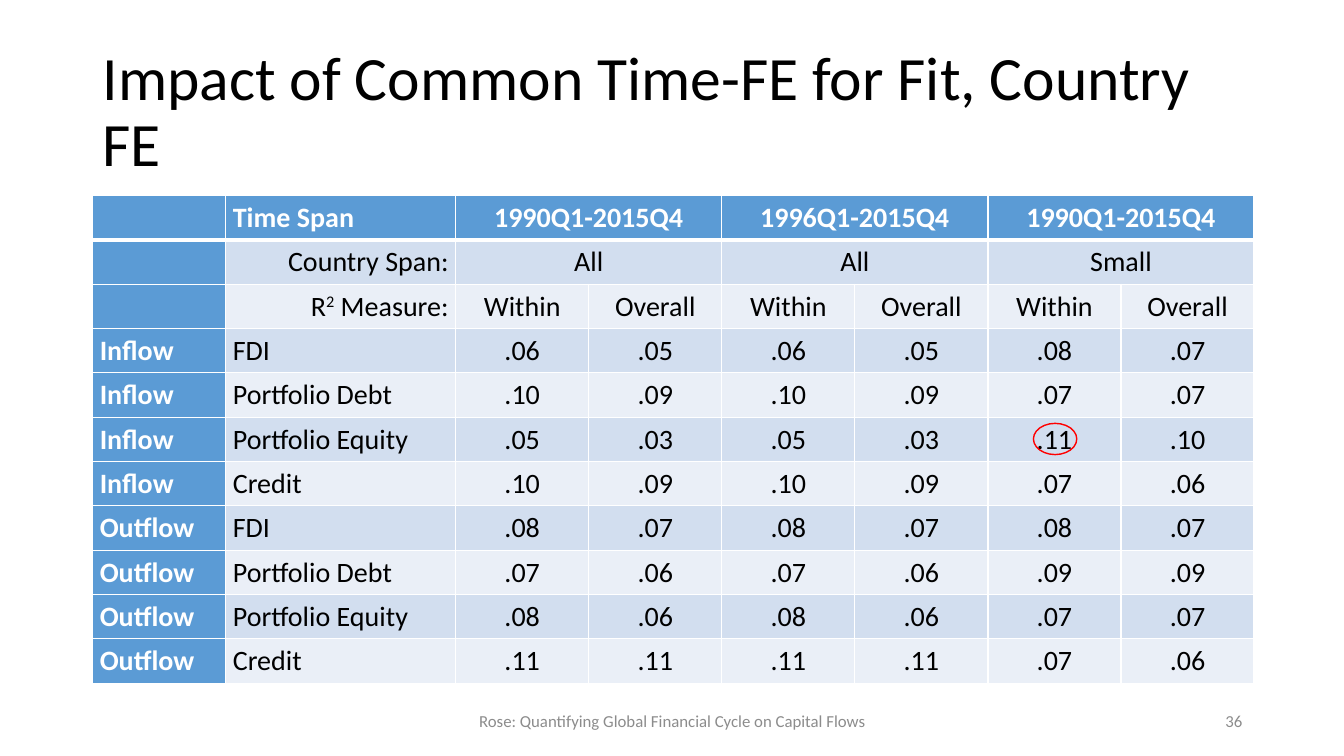
from lxml.etree import SubElement
from pptx import Presentation
from pptx.dml.color import RGBColor
from pptx.enum.shapes import MSO_SHAPE
from pptx.enum.text import MSO_ANCHOR, PP_ALIGN
from pptx.oxml.ns import qn
from pptx.util import Inches, Pt

COLORS = {"black": "000000", "white": "FFFFFF", "blue": "5B9BD5", "band": "D2DEEF",
          "pale": "EAEFF7", "grey": "8C8C8C", "red": "FF0000"}
LEFT, CENTER, RIGHT = PP_ALIGN.LEFT, PP_ALIGN.CENTER, PP_ALIGN.RIGHT


def write(p, text, size, color, bold=False):
    r = p.add_run()
    r.text = text
    for name, value in {"name": "Calibri", "size": Pt(size), "bold": bold}.items():
        setattr(r.font, name, value)
    r.font.color.rgb = RGBColor.from_string(COLORS[color])
    return r


def add_border(cell, side, width):
    ln = SubElement(cell._tc.get_or_add_tcPr(), qn(f"a:ln{side}"), w=str(Pt(width)))
    fill = SubElement(ln, qn("a:solidFill"))
    SubElement(fill, qn("a:srgbClr"), val=COLORS["white"])


prs = Presentation()
prs.slide_width, prs.slide_height = Inches(13.33), Inches(7.5)
s = prs.slides.add_slide(prs.slide_layouts[6])

texts = [
    ("Impact of Common Time-FE for Fit, Country FE", (0.92, 0.4, 11.5, 1.45), 44, "black", LEFT, 0.9),
    ("Rose: Quantifying Global Financial Cycle on Capital Flows", (4.42, 6.95, 4.5, 0.4), 12, "grey", CENTER, 1.0),
    ("36", (9.42, 6.95, 3, 0.4), 12, "grey", RIGHT, 1.0),
]
for text, box, size, color, align, spacing in texts:
    tf = s.shapes.add_textbox(*[Inches(v) for v in box]).text_frame
    tf.word_wrap = True
    tf.vertical_anchor = MSO_ANCHOR.MIDDLE
    p = tf.paragraphs[0]
    p.alignment, p.line_spacing = align, spacing
    write(p, text, size, color)

rows = [
    ["", "Time Span", "1990Q1-2015Q4", "", "1996Q1-2015Q4", "", "1990Q1-2015Q4", ""],
    ["", "Country Span:", "All", "", "All", "", "Small", ""],
    ["", "R2 Measure:"] + ["Within", "Overall"] * 3,
    ["Inflow", "FDI", ".06", ".05", ".06", ".05", ".08", ".07"],
    ["Inflow", "Portfolio Debt", ".10", ".09", ".10", ".09", ".07", ".07"],
    ["Inflow", "Portfolio Equity", ".05", ".03", ".05", ".03", ".11", ".10"],
    ["Inflow", "Credit", ".10", ".09", ".10", ".09", ".07", ".06"],
    ["Outflow", "FDI", ".08", ".07", ".08", ".07", ".08", ".07"],
    ["Outflow", "Portfolio Debt", ".07", ".06", ".07", ".06", ".09", ".09"],
    ["Outflow", "Portfolio Equity", ".08", ".06", ".08", ".06", ".07", ".07"],
    ["Outflow", "Credit", ".11", ".11", ".11", ".11", ".07", ".06"],
]
widths = [1.32, 2.28] + [1.32] * 6
table = s.shapes.add_table(len(rows), len(widths), Inches(0.92), Inches(1.94),
                           Inches(11.5), Inches(4.84)).table
for column, width in zip(table.columns, widths):
    column.width = Inches(width)

for i, row in enumerate(rows):
    table.rows[i].height = Inches(0.44)
    for j, text in enumerate(row):
        cell = table.cell(i, j)
        heading = i == 0 or j == 0
        for side in "LRTB":
            header_edge = (i, side) in [(0, "B"), (1, "T")]
            add_border(cell, side, 3 if header_edge else 1)
        cell.fill.solid()
        fill = "blue" if heading else "band" if i % 2 else "pale"
        cell.fill.fore_color.rgb = RGBColor.from_string(COLORS[fill])
        margins = {"margin_left": 0.07, "margin_right": 0.07, "margin_top": 0, "margin_bottom": 0}
        for name, value in margins.items():
            setattr(cell, name, Inches(value))
        if not text:
            continue
        p = cell.text_frame.paragraphs[0]
        p.line_spacing = 1.15
        p.alignment = CENTER if j > 1 else RIGHT if j == 1 and i in (1, 2) else LEFT
        color = "white" if heading else "black"
        if text == "R2 Measure:":
            write(p, "R", 20, color)
            r = write(p, "2", 20, color)
            r.font._element.set("baseline", "30000")
            write(p, " Measure:", 20, color)
        else:
            write(p, text, 20, color, heading)

for i in (0, 1):
    for j in (2, 4, 6):
        table.cell(i, j).merge(table.cell(i, j + 1))

sp = s.shapes.add_shape(MSO_SHAPE.OVAL, Inches(10.25), Inches(4.2), Inches(0.43), Inches(0.31))
sp.shadow.inherit = False
sp.fill.background()
sp.line.color.rgb = RGBColor.from_string(COLORS["red"])
sp.line.width = Pt(1)

prs.save("out.pptx")
